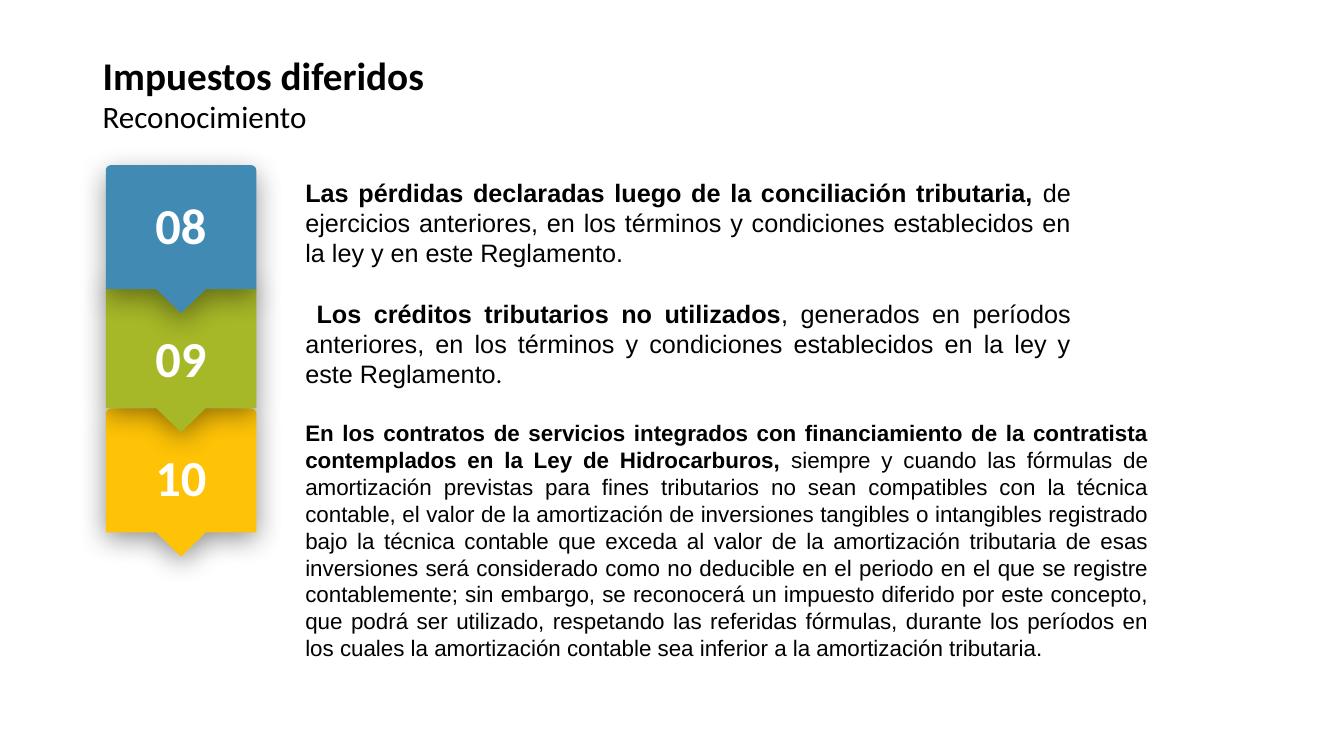
"""Build the slide on recognising deferred taxes, with three numbered ribbons."""
import math

from lxml import etree
from pptx import Presentation
from pptx.dml.color import RGBColor
from pptx.enum import text
from pptx.oxml import ns
from pptx.util import Pt

BLACK = RGBColor(0x00, 0x00, 0x00)
WHITE = RGBColor(0xFF, 0xFF, 0xFF)
BLUE = RGBColor(0x41, 0x8A, 0xB3)
GREEN = RGBColor(0xA6, 0xB7, 0x27)
YELLOW = RGBColor(0xFE, 0xC3, 0x06)

RIBBON_LEFT, RIBBON_WIDTH, RIBBON_HEIGHT = 75.6, 107.5, 88.5
POINT_HALF_WIDTH, POINT_HEIGHT, CORNER = 17.75, 17.3, 3.8
BODY_LEFT = 211


def write(shape, runs, size, color=BLACK, align=text.PP_ALIGN.LEFT,
          anchor=text.MSO_ANCHOR.TOP, spacing=1.0):
    frame = shape.text_frame
    frame.word_wrap = True
    frame.auto_size = text.MSO_AUTO_SIZE.NONE
    frame.vertical_anchor = anchor
    paragraph = frame.paragraphs[0]
    paragraph.alignment = align
    paragraph.line_spacing = spacing
    for words, font, bold in runs:
        run = paragraph.add_run()
        run.text = words
        run.font.name = font
        run.font.size = Pt(size)
        run.font.bold = bold
        run.font.color.rgb = color


def add_ribbon(shapes, top, color, opacity, distance):
    right, bottom = RIBBON_LEFT + RIBBON_WIDTH, top + RIBBON_HEIGHT
    middle = RIBBON_LEFT + RIBBON_WIDTH / 2
    outline = []
    for center, start in ((RIBBON_LEFT + CORNER, 180), (right - CORNER, 270)):
        for step in range(7):
            angle = math.radians(start + 15 * step)
            outline.append((center + CORNER * math.cos(angle),
                            top + CORNER + CORNER * math.sin(angle)))
    outline += [(right, bottom), (middle + POINT_HALF_WIDTH, bottom),
                (middle, bottom + POINT_HEIGHT),
                (middle - POINT_HALF_WIDTH, bottom), (RIBBON_LEFT, bottom)]
    points = [(Pt(x), Pt(y)) for x, y in outline]
    builder = shapes.build_freeform(*points[0], scale=1.0)
    builder.add_line_segments(points[1:], close=True)
    ribbon = builder.convert_to_shape()
    ribbon.fill.solid()
    ribbon.fill.fore_color.rgb = color
    ribbon.line.fill.background()
    ribbon.shadow.inherit = False
    effects = ribbon._element.spPr.find(ns.qn("a:effectLst"))
    shadow = etree.SubElement(
        effects, ns.qn("a:outerShdw"), blurRad=str(Pt(20)),
        dist=str(Pt(distance)), dir="5400000", algn="t", rotWithShape="0")
    black = etree.SubElement(shadow, ns.qn("a:srgbClr"), val="000000")
    etree.SubElement(black, ns.qn("a:alpha"), val=str(opacity * 1000))


presentation = Presentation()
presentation.slide_width = Pt(960)
presentation.slide_height = Pt(540)
slide = presentation.slides.add_slide(presentation.slide_layouts[5])

title = slide.shapes.title
title.left, title.top, title.width, title.height = Pt(66.2), Pt(36.7), Pt(474.5), Pt(46)
write(title, [("Impuestos diferidos", "Calibri", True)], 28, spacing=0.9)

subtitle = slide.shapes.add_textbox(Pt(66.2), Pt(72), Pt(404.6), Pt(28))
write(subtitle, [("Reconocimiento", "Calibri", False)], 22.2,
      anchor=text.MSO_ANCHOR.MIDDLE, spacing=0.7)

ribbons = [
    (291.8, YELLOW, 43, 4, "10", 315.4),
    (203, GREEN, 43, 4, "09", 230.2),
    (118, BLUE, 40, 6, "08", 135.4),
]
for top, color, opacity, distance, number, number_top in ribbons:
    add_ribbon(slide.shapes, top, color, opacity, distance)
for top, color, opacity, distance, number, number_top in ribbons:
    label = slide.shapes.add_textbox(Pt(87.5), Pt(number_top), Pt(83.5), Pt(51))
    write(label, [(number, "Calibri", True)], 36, WHITE, text.PP_ALIGN.CENTER)

body_texts = [
    (123.1, 561, 72.7, 18, [
        ("Las pérdidas declaradas luego de la conciliación tributaria, ", "Arial", True),
        ("de ejercicios anteriores, en los términos y condiciones establecidos "
         "en la ley y en este Reglamento.", "Arial", False),
    ]),
    (209.5, 561, 72.7, 18, [
        (" ", "Calibri", True),
        ("Los créditos tributarios no utilizados", "Arial", True),
        (", generados en períodos anteriores, en los términos y condiciones "
         "establecidos en la ley y este Reglamento", "Arial", False),
        (".", "Calibri", False),
    ]),
    (296, 616.3, 181.4, 16, [
        ("En los contratos de servicios integrados con financiamiento de la contratista "
         "contemplados en la Ley de Hidrocarburos, ", "Arial", True),
        ("siempre y cuando las fórmulas de amortización previstas para fines tributarios "
         "no sean compatibles con la técnica contable, el valor de la amortización de "
         "inversiones tangibles o intangibles registrado bajo la técnica contable que "
         "exceda al valor de la amortización tributaria de esas inversiones será "
         "considerado como no deducible en el periodo en el que se registre "
         "contablemente; sin embargo, se reconocerá un impuesto diferido por este "
         "concepto, que podrá ser utilizado, respetando las referidas fórmulas, durante "
         "los períodos en los cuales la amortización contable sea inferior a la "
         "amortización tributaria.", "Arial", False),
    ]),
]
for top, width, height, size, runs in body_texts:
    body = slide.shapes.add_textbox(Pt(BODY_LEFT), Pt(top), Pt(width), Pt(height))
    write(body, runs, size, align=text.PP_ALIGN.JUSTIFY)

presentation.save("out.pptx")
